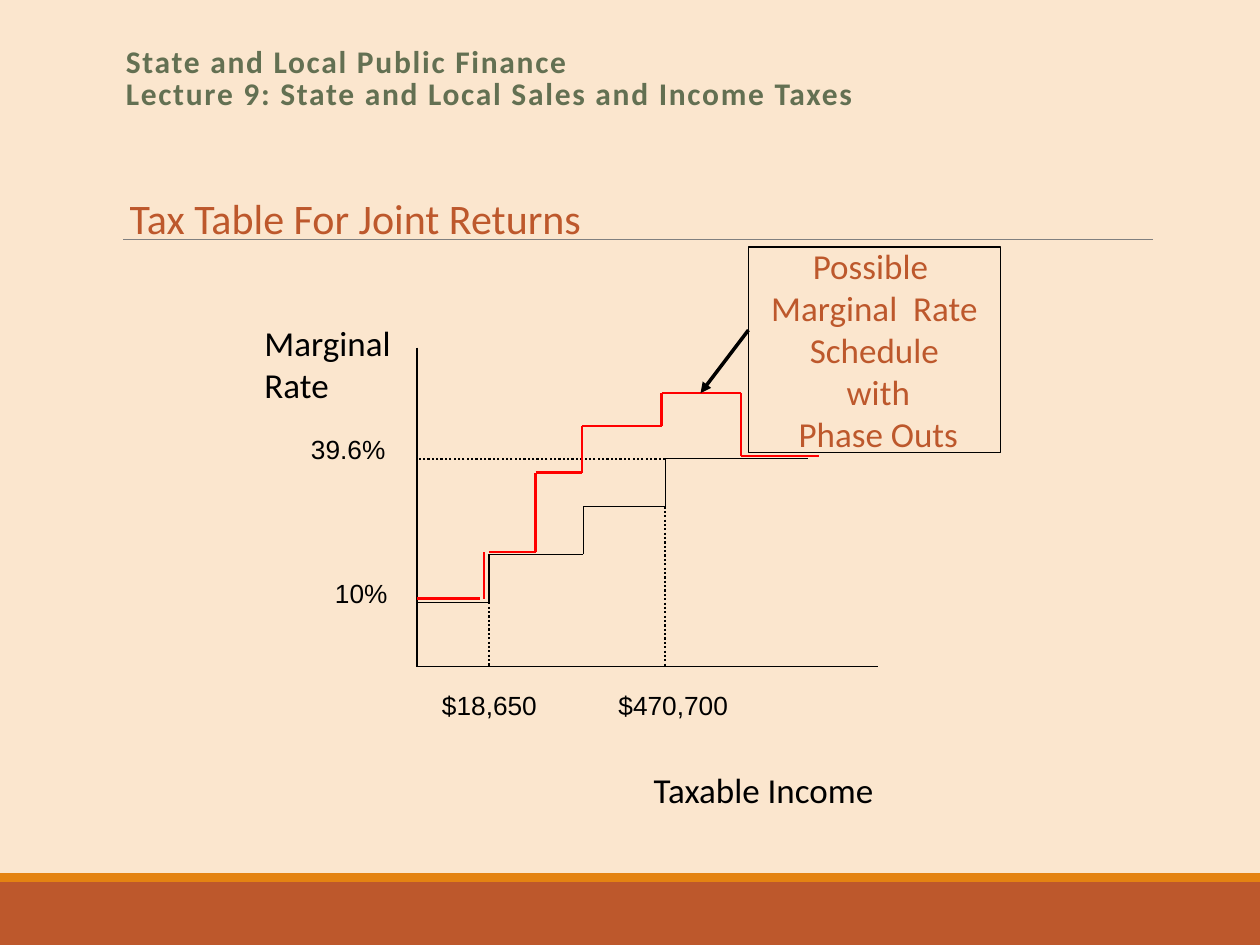
from dataclasses import dataclass
from itertools import pairwise
from typing import Optional

import pptx
import pptx.dml.color
import pptx.enum.dml
import pptx.enum.shapes
import pptx.enum.text
import pptx.oxml.ns
import pptx.util
from lxml import etree

Inches = pptx.util.Inches
Pt = pptx.util.Pt
BLACK, RED, RUST = "000000", "FF0000", "BD582C"


@dataclass
class Label:
    text: str
    left: float
    top: float
    width: float
    height: float
    size: float = 15
    font: str = "Arial"
    color: str = BLACK
    bold: bool = False
    line_spacing: float = 1.0
    inset: float = 0.1
    tracking: int = 0


@dataclass
class Path:
    points: list[tuple[float, float]]
    color: str = BLACK
    width: float = 0.75
    dotted: bool = False
    arrow: bool = False


@dataclass
class Box:
    left: float
    top: float
    width: float
    height: float
    fill: Optional[str] = None
    line: Optional[str] = None


def rgb(value: str) -> pptx.dml.color.RGBColor:
    return pptx.dml.color.RGBColor.from_string(value)


def add_xml(parent, tag: str, **attrs: str) -> None:
    etree.SubElement(parent, pptx.oxml.ns.qn(tag), attrs)


def style_runs(p, size: float, font: str, color: str, bold: bool = False) -> None:
    for r in p.runs:
        r.font.size = Pt(size)
        r.font.name = font
        r.font.bold = bold
        r.font.color.rgb = rgb(color)


def draw_label(s, label: Label) -> None:
    sp = s.shapes.add_textbox(Inches(label.left), Inches(label.top),
                              Inches(label.width), Inches(label.height))
    tf = sp.text_frame
    tf.word_wrap = True
    tf.margin_left = tf.margin_right = Inches(label.inset)
    p = tf.paragraphs[0]
    p.text = label.text
    p.line_spacing = label.line_spacing
    style_runs(p, label.size, label.font, label.color, label.bold)
    if label.tracking:
        for r in p.runs:
            r.font._element.set("spc", str(label.tracking))


def draw_path(s, path: Path) -> None:
    for (x1, y1), (x2, y2) in pairwise(path.points):
        c = s.shapes.add_connector(pptx.enum.shapes.MSO_CONNECTOR.STRAIGHT,
                                   Inches(x1), Inches(y1), Inches(x2), Inches(y2))
        c.line.color.rgb = rgb(path.color)
        c.line.width = Pt(path.width)
        if path.dotted:
            c.line.dash_style = pptx.enum.dml.MSO_LINE.ROUND_DOT
        if path.arrow:
            add_xml(c.line._get_or_add_ln(), "a:tailEnd", type="triangle")
        add_xml(c._element.spPr, "a:effectLst")


def draw_box(s, box: Box):
    sp = s.shapes.add_shape(pptx.enum.shapes.MSO_SHAPE.RECTANGLE, Inches(box.left),
                            Inches(box.top), Inches(box.width), Inches(box.height))
    sp.shadow.inherit = False
    if box.fill:
        sp.fill.solid()
        sp.fill.fore_color.rgb = rgb(box.fill)
    else:
        sp.fill.background()
    if box.line:
        sp.line.color.rgb = rgb(box.line)
        sp.line.width = Pt(0.75)
    else:
        sp.line.fill.background()
    return sp


def draw_callout(s, box: Box, lines: list[str]) -> None:
    tf = draw_box(s, box).text_frame
    tf.word_wrap = False
    tf.vertical_anchor = pptx.enum.text.MSO_ANCHOR.MIDDLE
    tf.text = "\n".join(lines)
    for p in tf.paragraphs:
        p.alignment = pptx.enum.text.PP_ALIGN.CENTER
        style_runs(p, 20, "Calibri", RUST)


X0, Y0 = 3.31, 5.29
LOW_X, MID_X, TOP_X = 3.88, 4.63, 5.28
LOW_Y, SECOND_Y, THIRD_Y, TOP_Y = 4.78, 4.4, 4.02, 3.64

FOOTER = [Box(0, 7, 10, 0.5, RUST), Box(0, 6.93, 10, 0.07, "E48312")]
LABELS = [
    Label("State and Local Public Finance\vLecture 9: State and Local Sales and Income Taxes",
          0.9, 0.33, 8.25, 0.65, 18, "Calibri", "637052", True, 0.85, tracking=100),
    Label("Tax Table For Joint Returns", 1.03, 1.52, 5.06, 0.39, 24, "Calibri", RUST,
          line_spacing=0.9, inset=0),
    Label("Taxable Income", 5.09, 6.05, 2.16, 0.51, 20, "Calibri"),
    Label("Marginal Rate", 2, 2.5, 1.22, 0.76, 20, "Calibri"),
    Label("10%", 2.56, 4.53, 0.69, 0.51),
    Label("39.6%", 2.37, 3.39, 0.84, 0.51),
    Label("$18,650", 3.41, 5.42, 1.03, 0.51),
    Label("$470,700", 4.81, 5.42, 1.12, 0.51),
]
PATHS = [
    Path([(0.98, 1.9), (9.15, 1.9)], "808080", 0.5),
    Path([(X0, 2.76), (X0, Y0), (6.97, Y0)]),
    Path([(X0, LOW_Y), (LOW_X, LOW_Y), (LOW_X, SECOND_Y), (MID_X, SECOND_Y),
          (MID_X, THIRD_Y), (TOP_X, THIRD_Y), (TOP_X, TOP_Y), (6.41, TOP_Y)]),
    Path([(TOP_X, TOP_Y), (X0, TOP_Y)], width=1.25, dotted=True),
    Path([(LOW_X, LOW_Y), (LOW_X, Y0)], width=1.25, dotted=True),
    Path([(TOP_X, THIRD_Y), (TOP_X, Y0)], width=1.25, dotted=True),
    Path([(X0, 4.75), (3.81, 4.75)], RED, 1.25),
    Path([(3.84, 4.75), (3.84, 4.38)], RED, 1.25),
    Path([(LOW_X, 4.38), (4.25, 4.38), (4.25, 3.75), (4.62, 3.75), (4.62, 3.38),
          (5.25, 3.38), (5.25, 3.12), (5.88, 3.12), (5.88, 3.62), (6.5, 3.62)], RED, 1.25),
    Path([(5.94, 2.62), (5.56, 3.12)], width=2, arrow=True),
]


def main() -> None:
    prs = pptx.Presentation()
    prs.slide_width, prs.slide_height = Inches(10), Inches(7.5)
    s = prs.slides.add_slide(prs.slide_layouts[6])
    s.background.fill.solid()
    s.background.fill.fore_color.rgb = rgb("FBE6CE")
    for box in FOOTER:
        draw_box(s, box)
    for label in LABELS:
        draw_label(s, label)
    for path in PATHS:
        draw_path(s, path)
    draw_callout(s, Box(5.94, 1.96, 2, 1.63, line=BLACK),
                 ["Possible ", "Marginal  Rate", "Schedule", " with", " Phase Outs"])
    prs.save("out.pptx")


if __name__ == "__main__":
    main()
